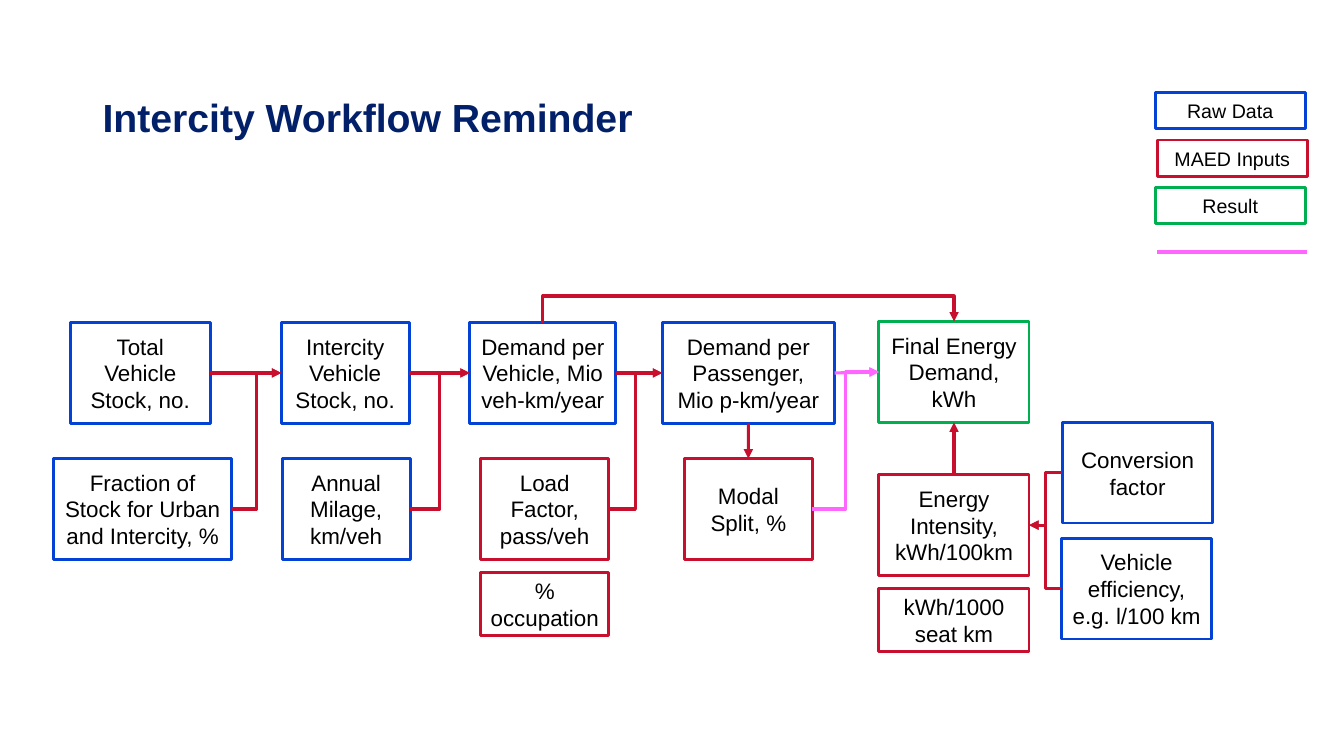
from lxml import etree
from pptx import Presentation
from pptx.enum import shapes, text
from pptx.dml.color import RGBColor
from pptx.oxml import ns
from pptx.util import Pt

TITLE = "Intercity Workflow Reminder"
FONT = "Arial"
HUES = {"navy": "012069", "raw": "0342D4", "input": "C8102E", "result": "00B050",
        "split": "FF66FF", "white": "FFFFFF", "black": "000000"}
TOP, LOW, TALL, SHORT = 230.4, 327.6, 72, 44.9
SLIM, WIDE = 91.4, 107.3
BOXES = {
    "total": ("Total Vehicle Stock, no.", "raw", 50.2, TOP, 100, TALL),
    "share": ("Fraction of Stock for Urban and Intercity, %", "raw", 38.2, LOW, 127.4, TALL),
    "stock": ("Intercity Vehicle Stock, no.", "raw", 200.9, TOP, SLIM, TALL),
    "miles": ("Annual Milage, km/veh", "raw", 201.6, LOW, SLIM, TALL),
    "trips": ("Demand per Vehicle, Mio veh-km/year", "raw", 335.5, TOP, 104.4, TALL),
    "load": ("Load Factor, pass/veh", "input", 343.4, LOW, SLIM, TALL),
    "riders": ("Demand per Passenger, Mio p-km/year", "raw", 473, TOP, 123.1, TALL),
    "modal": ("Modal Split, %", "input", 488.9, LOW, SLIM, TALL),
    "motor": ("Vehicle efficiency, e.g. l/100 km", "raw", 758.2, 384.5, WIDE, TALL),
    "factor": ("Conversion factor", "raw", 758.9, 301.7, WIDE, TALL),
    "power": ("Energy Intensity, kWh/100km", "input", 627.8, 339.1, WIDE, TALL),
    "final": ("Final Energy Demand, kWh", "result", 627.8, 229.7, WIDE, TALL),
    "filled": ("% occupation", "input", 343.4, 409, SLIM, SHORT),
    "seat": ("kWh/1000 seat km", "input", 627.8, 420.5, WIDE, SHORT),
}
KEYS = [("Raw Data", "raw", 825.1, 66.2), ("MAED Inputs", "input", 826.6, 100.1),
        ("Result", "result", 825.1, 133.9)]
UP, LEFT, DOWN, RIGHT = range(4)
DIRECT = [("total", RIGHT, "stock", LEFT, "input"), ("stock", RIGHT, "trips", LEFT, "input"),
          ("trips", RIGHT, "riders", LEFT, "input"), ("riders", DOWN, "modal", UP, "input"),
          ("power", UP, "final", DOWN, "input"), ("riders", RIGHT, "final", LEFT, "split")]
BENT = [("share", RIGHT, "stock", LEFT, "input"), ("miles", RIGHT, "trips", LEFT, "input"),
        ("load", RIGHT, "riders", LEFT, "input"), ("factor", LEFT, "power", RIGHT, "input"),
        ("motor", LEFT, "power", RIGHT, "input"), ("modal", RIGHT, "final", LEFT, "split")]
RISE = 18.7


def hue(name):
    return RGBColor.from_string(HUES[name])


def style(par, size, color, bold=False):
    par.font.name, par.font.size, par.font.bold = FONT, Pt(size), bold
    par.font.color.rgb = hue(color)


def box(slide, words, kind, x, y, w, h, size=16):
    shape = slide.shapes.add_shape(shapes.MSO_SHAPE.RECTANGLE, Pt(x), Pt(y), Pt(w), Pt(h))
    shape.shadow.inherit = False
    shape.fill.solid()
    shape.fill.fore_color.rgb = hue("white")
    shape.line.color.rgb, shape.line.width = hue(kind), Pt(2)
    frame = shape.text_frame
    frame.word_wrap = True
    frame.margin_left = frame.margin_right = Pt(6.8)
    frame.vertical_anchor = text.MSO_ANCHOR.MIDDLE
    par = frame.paragraphs[0]
    par.text, par.alignment = words, text.PP_ALIGN.CENTER
    style(par, size, "black")
    return shape


def side(name, spot):
    x, y, w, h = BOXES[name][2:]
    return [(x + w / 2, y), (x, y + h / 2), (x + w / 2, y + h), (x + w, y + h / 2)][spot]


def link(slide, start, end, color, bent=False, width=2.25, head=True):
    kind = shapes.MSO_CONNECTOR.ELBOW if bent else shapes.MSO_CONNECTOR.STRAIGHT
    line = slide.shapes.add_connector(kind, *map(Pt, (*start, *end)))
    line.line.color.rgb, line.line.width = hue(color), Pt(width)
    if head:
        etree.SubElement(line.line._get_or_add_ln(), ns.qn("a:tailEnd"), type="triangle")
    etree.SubElement(line._element.spPr, ns.qn("a:effectLst"))
    return line


def arch(slide, start, end):
    (x, y), (far, top) = start, end
    mid, half, gap = (x + far) / 2, (far - x) / 2, (y - top) / 2
    line = link(slide, (mid + gap, (y + top) / 2 + half),
                (mid - gap, (y + top) / 2 - half), "input", True)
    props = line._element.spPr
    props.find(ns.qn("a:xfrm")).set("rot", str(90 * 60000))
    guides = props.find(ns.qn("a:prstGeom")).get_or_add_avLst()
    ratio = round(RISE / (2 * gap) * 100000)
    etree.SubElement(guides, ns.qn("a:gd"), name="adj1", fmla=f"val {ratio}")


def main():
    """Build the intercity workflow slide."""
    deck = Presentation()
    deck.slide_width, deck.slide_height = Pt(960), Pt(540)
    slide = deck.slides.add_slide(deck.slide_layouts[6])
    frame = slide.shapes.add_textbox(Pt(66.2), Pt(0), Pt(828), Pt(104.4)).text_frame
    frame.word_wrap, frame.vertical_anchor = True, text.MSO_ANCHOR.BOTTOM
    par = frame.paragraphs[0]
    par.text, par.line_spacing = TITLE, 0.9
    style(par, 28, "navy", True)
    made = {name: box(slide, *data) for name, data in BOXES.items()}
    for words, kind, x, y in KEYS:
        box(slide, words, kind, x, y, WIDE, 25.9, 14)
    for src, out, dest, into, color in DIRECT:
        line = link(slide, side(src, out), side(dest, into), color)
        line.begin_connect(made[src], out)
        line.end_connect(made[dest], into)
    for src, out, dest, into, color in BENT:
        link(slide, side(src, out), side(dest, into), color, True)
    arch(slide, side("trips", UP), side("final", UP))
    link(slide, (826.6, 180), (933.9, 180), "split", width=3, head=False)
    deck.save("out.pptx")


if __name__ == "__main__":
    main()
